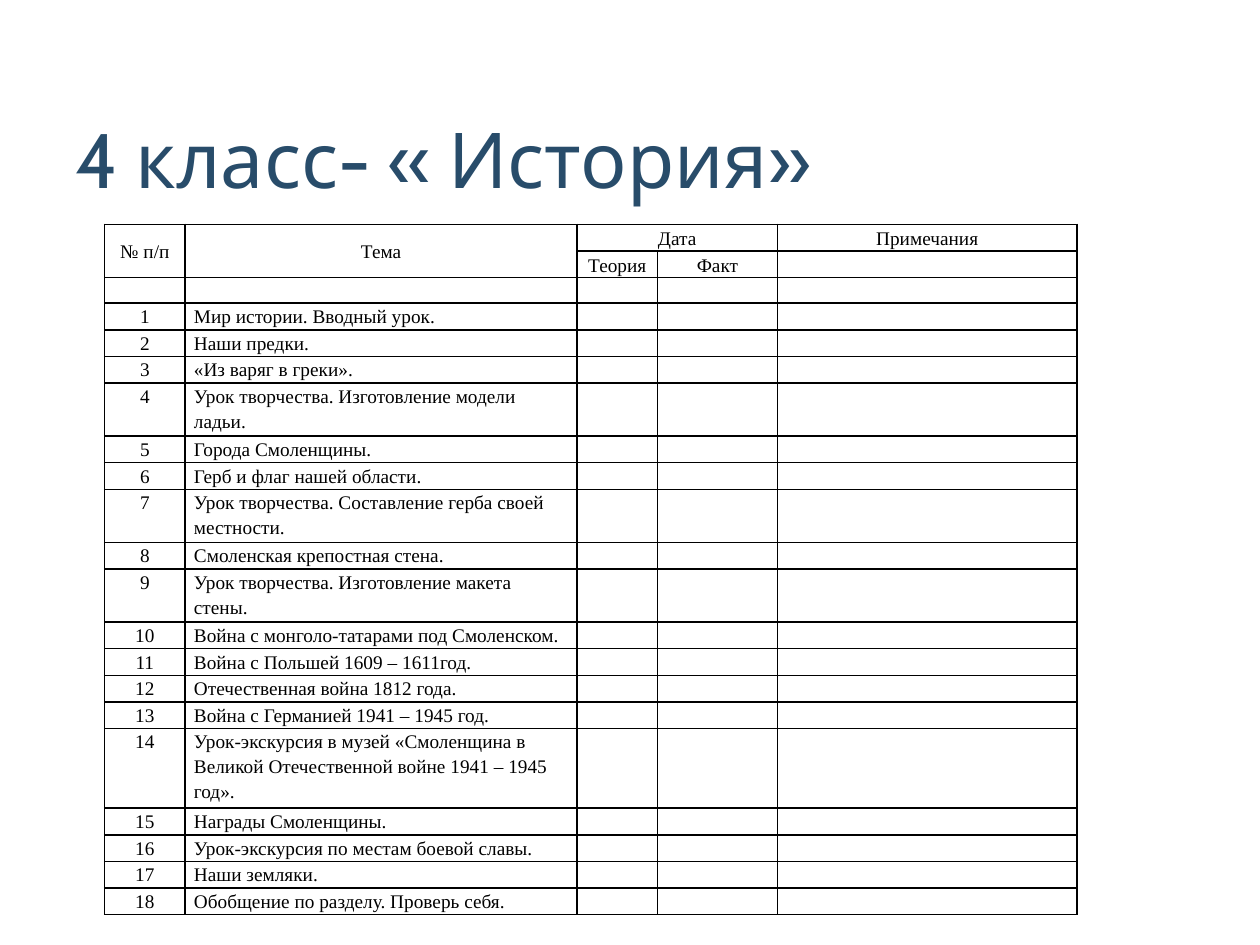
from dataclasses import dataclass

from lxml.etree import SubElement
from pptx import Presentation
from pptx.dml.color import RGBColor
from pptx.enum.text import MSO_ANCHOR, PP_ALIGN
from pptx.oxml.ns import qn
from pptx.util import Inches, Pt

GRID_COLUMNS, GRID_ROWS = 100, 75


@dataclass(frozen=True)
class Theme:
    title_font: str = "Cabin"
    table_font: str = "Times New Roman"
    title_color: str = "284C6A"
    table_color: str = "000000"
    title_size: float = 44
    table_size: float = 11
    line_spacing: float = 1.15
    line_height: float = 14.75
    border_width: float = 1


def set_attributes(target, values):
    for name, value in values.items():
        setattr(target, name, value)


class SlideBuilder:
    def __init__(self, presentation, theme):
        self.presentation = presentation
        self.theme = theme
        self.slide = presentation.slides.add_slide(presentation.slide_layouts[6])

    def across(self, columns):
        return round(self.presentation.slide_width * columns / GRID_COLUMNS)

    def down(self, rows):
        return round(self.presentation.slide_height * rows / GRID_ROWS)

    def add_text(self, paragraph, text, font, size, color):
        run = paragraph.add_run()
        run.text = text
        set_attributes(run.font, {"name": font, "size": Pt(size)})
        run.font.color.rgb = RGBColor.from_string(color)

    def title(self, text, left, top, width, height):
        shape = self.slide.shapes.add_textbox(
            self.across(left), self.down(top), self.across(width), self.down(height))
        frame = shape.text_frame
        set_attributes(frame, {"word_wrap": True, "vertical_anchor": MSO_ANCHOR.MIDDLE})
        theme = self.theme
        self.add_text(frame.paragraphs[0], text, theme.title_font, theme.title_size, theme.title_color)

    def table(self, left, top, widths, line_counts):
        """Add an empty bordered table; each row is as high as its count of lines."""
        heights = [Pt(count * self.theme.line_height) for count in line_counts]
        table = self.slide.shapes.add_table(
            len(heights), len(widths), self.across(left), self.down(top),
            self.across(sum(widths)), sum(heights)).table
        set_attributes(table, {"first_row": False, "horz_banding": False})
        for column, width in zip(table.columns, widths):
            column.width = self.across(width)
        for row, height in zip(table.rows, heights):
            row.height = height
        for cell in table.iter_cells():
            self.style_cell(cell)
        return table

    def style_cell(self, cell):
        set_attributes(cell, {"margin_left": Inches(0.07), "margin_right": Inches(0.07),
                              "margin_top": 0, "margin_bottom": 0})
        properties = cell._tc.get_or_add_tcPr()
        for side in ("lnL", "lnR", "lnT", "lnB"):
            line = SubElement(properties, qn(f"a:{side}"), w=str(Pt(self.theme.border_width)))
            fill = SubElement(line, qn("a:solidFill"))
            SubElement(fill, qn("a:srgbClr"), val=self.theme.table_color)
        cell.fill.background()
        # The end mark keeps rows of empty cells low.
        paragraph = cell.text_frame.paragraphs[0]
        SubElement(paragraph._p, qn("a:endParaRPr"), sz=str(round(self.theme.table_size * 100)))

    def cell_text(self, cell, text, alignment=PP_ALIGN.LEFT, anchor=MSO_ANCHOR.TOP):
        theme = self.theme
        cell.vertical_anchor = anchor
        paragraph = cell.text_frame.paragraphs[0]
        set_attributes(paragraph, {"alignment": alignment, "line_spacing": theme.line_spacing})
        self.add_text(paragraph, text, theme.table_font, theme.table_size, theme.table_color)


# Row, column, last row, last column, text
HEADINGS = [
    (0, 0, 1, 0, "№ п/п"),
    (0, 1, 1, 1, "Тема"),
    (0, 2, 0, 3, "Дата"),
    (0, 4, 0, 4, "Примечания"),
    (1, 2, 1, 2, "Теория"),
    (1, 3, 1, 3, "Факт"),
]
TOPICS = [
    "Мир истории. Вводный урок.",
    "Наши предки.",
    "«Из варяг в греки».",
    "Урок творчества. Изготовление модели ладьи.",
    "Города Смоленщины.",
    "Герб и флаг нашей области.",
    "Урок творчества. Составление герба своей местности.",
    "Смоленская крепостная стена.",
    "Урок творчества. Изготовление макета стены.",
    "Война с монголо-татарами под Смоленском.",
    "Война с Польшей 1609 – 1611год.",
    "Отечественная война 1812 года.",
    "Война с Германией 1941 – 1945 год.",
    "Урок-экскурсия в музей «Смоленщина в Великой Отечественной войне 1941 – 1945 год».",
    "Награды Смоленщины.",
    "Урок-экскурсия по местам боевой славы.",
    "Наши земляки.",
    "Обобщение по разделу. Проверь себя.",
]
COLUMN_WIDTHS = [6.4, 31.1, 6.4, 9.5, 23.8]
HEADER_ROWS = 3
TALL_TOPICS = {7: 2, 14: 3}


def main():
    presentation = Presentation()
    set_attributes(presentation, {"slide_width": Inches(10), "slide_height": Inches(7.5)})
    builder = SlideBuilder(presentation, Theme())
    builder.title("4 класс- « История»", 5, 7.5, 88.3, 10)

    line_counts = [1] * HEADER_ROWS + [
        TALL_TOPICS.get(number, 1) for number in range(1, len(TOPICS) + 1)]
    table = builder.table(8.3, 17.8, COLUMN_WIDTHS, line_counts)
    for row, column, last_row, last_column, text in HEADINGS:
        cell = table.cell(row, column)
        if (row, column) != (last_row, last_column):
            cell.merge(table.cell(last_row, last_column))
        builder.cell_text(cell, text, PP_ALIGN.CENTER, MSO_ANCHOR.MIDDLE)
    for number, topic in enumerate(TOPICS, start=1):
        row = HEADER_ROWS + number - 1
        builder.cell_text(table.cell(row, 0), str(number), PP_ALIGN.CENTER)
        builder.cell_text(table.cell(row, 1), topic)

    presentation.save("out.pptx")


if __name__ == "__main__":
    main()
